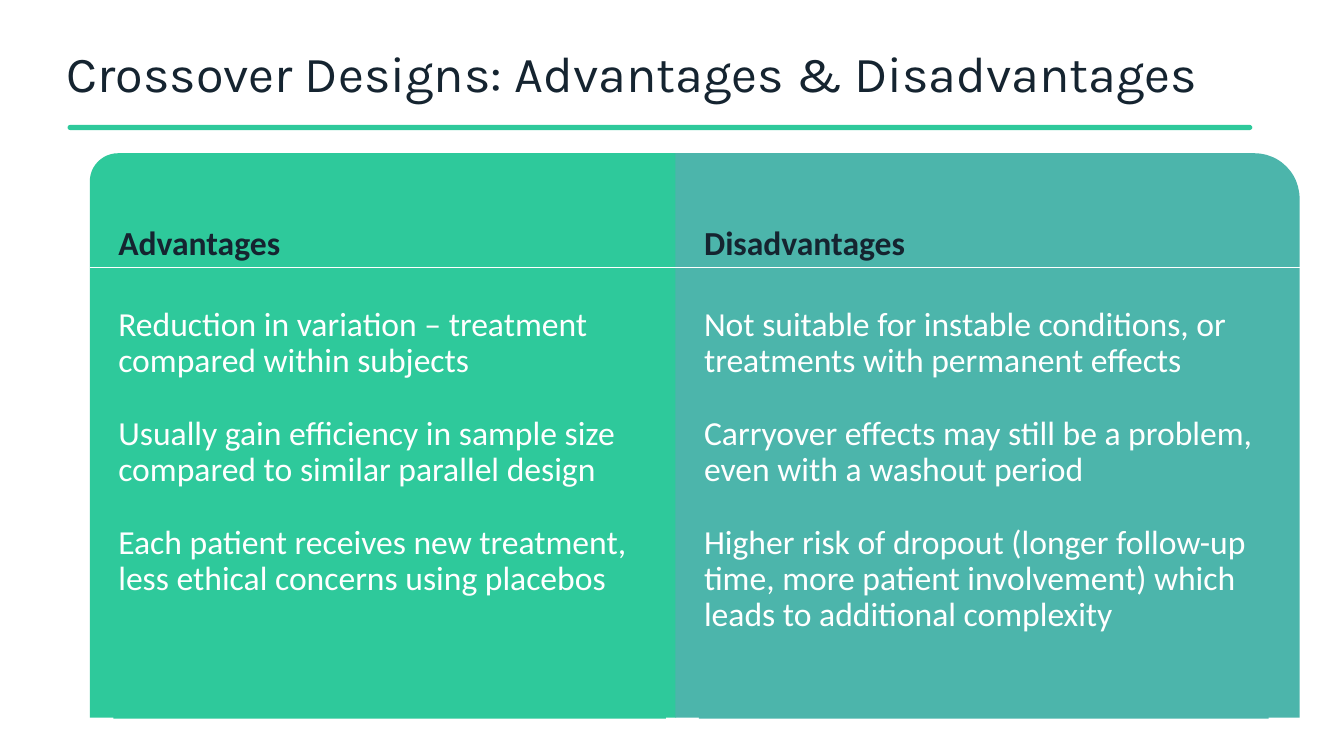
from lxml import etree
from pptx import Presentation
from pptx.dml.color import RGBColor
from pptx.enum.shapes import MSO_CONNECTOR, MSO_SHAPE
from pptx.enum.text import MSO_ANCHOR, MSO_AUTO_SIZE, PP_ALIGN
from pptx.oxml.ns import qn
from pptx.util import Inches, Pt

RECT = MSO_SHAPE.RECTANGLE
ROUND = MSO_SHAPE.ROUNDED_RECTANGLE
SNIP = MSO_SHAPE.SNIP_ROUND_RECTANGLE
STRAIGHT = MSO_CONNECTOR.STRAIGHT
TOP, MIDDLE = MSO_ANCHOR.TOP, MSO_ANCHOR.MIDDLE
LEFT = PP_ALIGN.LEFT
FIXED = MSO_AUTO_SIZE.NONE

GREEN, TEAL, INK, WHITE = "2EC99B", "4CB5AB", "152430", "FFFFFF"
WIDE, HIGH = 13.33, 7.5
INDENT = 1.75

# name, left, width, colour, corner, flipped, label size, body width, points
PANELS = [
    ("Advantages", 6.68, 43.62, GREEN, 0.05, False, (16.05, 6.4), 41.11, [
        "Reduction in variation – treatment compared within subjects",
        "Usually gain efficiency in sample size compared to similar parallel design",
        "Each patient receives new treatment, less ethical concerns using placebos",
    ]),
    ("Disadvantages", 50.26, 46.44, TEAL, 0.08, True, (19.43, 8.4), 42.39, [
        "Not suitable for instable conditions, or treatments with permanent effects",
        "Carryover effects may still be a problem, even with a washout period",
        "Higher risk of dropout (longer follow-up time, more patient involvement) "
        "which leads to additional complexity",
    ]),
]


def hue(code):
    return RGBColor.from_string(code)


def write(shape, lines, font="Calibri", size=24, color=WHITE, bold=False,
          anchor=TOP, inset=(0.05, 0.05), gap=0):
    """Fill a shape with one paragraph per line; gap is the space between, in points."""
    frame = shape.text_frame
    frame.word_wrap, frame.auto_size = True, FIXED
    frame.vertical_anchor = anchor
    frame.margin_left = frame.margin_right = Inches(inset[0])
    frame.margin_top = frame.margin_bottom = Inches(inset[1])
    for i, line in enumerate(lines):
        para = frame.add_paragraph() if i else frame.paragraphs[0]
        para.alignment, para.line_spacing = LEFT, 0.9
        para.space_before = Pt(gap if i else 0)
        run = para.add_run()
        run.text = line
        run.font.name, run.font.size = font, Pt(size)
        run.font.bold, run.font.color.rgb = bold, hue(color)


class Deck:
    """Places elements on a grid of 100 columns by 100 rows."""

    def __init__(self):
        self.file = Presentation()
        self.file.slide_width = Inches(WIDE)
        self.file.slide_height = Inches(HIGH)
        self.slide = self.file.slides.add_slide(self.file.slide_layouts[5])

    def grid(self, x, y, w, h):
        """Turn columns and rows into lengths."""
        return [Inches(v * side / 100)
                for v, side in zip((x, y, w, h), (WIDE, HIGH) * 2)]

    def title(self, text, *box):
        head = self.slide.shapes.title
        head.left, head.top, head.width, head.height = self.grid(*box)
        write(head, [text], font="Karla", size=36, color=INK,
              anchor=MIDDLE, inset=(0.1, 0.05))

    def block(self, home, kind, box, fill, corners=(), flip=False):
        shape = home.add_shape(kind, *self.grid(*box))
        shape.shadow.inherit = False
        shape.fill.solid()
        shape.fill.fore_color.rgb = hue(fill)
        shape.line.fill.background()
        for i, value in enumerate(corners):
            shape.adjustments[i] = value
        if flip:
            shape._element.spPr.find(qn("a:xfrm")).set("flipH", "1")
        return shape

    def rule(self, home, x, y, w):
        line = home.add_connector(STRAIGHT, *self.grid(x, y, x + w, y))
        line.line.color.rgb = hue(WHITE)
        line.line.width = Pt(0.75)
        etree.SubElement(line._element.spPr, qn("a:effectLst"))

    def panel(self, name, x, w, fill, corner, flip, label, width, points):
        home = self.slide.shapes.add_group_shape().shapes
        self.block(home, SNIP, (x, 20.27, w, 74.67), fill, (corner, 0), flip)
        head = self.block(home, RECT, (x + INDENT, 29.33, *label), fill)
        write(head, [name], color=INK, bold=True)
        body = self.block(home, RECT, (x + INDENT, 40, width, 55.07), fill)
        write(body, points, gap=26)
        self.rule(home, x, 35.33, w)


def main():
    deck = Deck()
    deck.block(deck.slide.shapes, ROUND, (5.03, 16.53, 88.15, 0.67), GREEN, (0.5,))
    deck.title("Crossover Designs: Advantages & Disadvantages", 4.2, 4.93, 88.97, 10.4)
    for panel in PANELS:
        deck.panel(*panel)
    deck.file.save("out.pptx")


if __name__ == "__main__":
    main()
